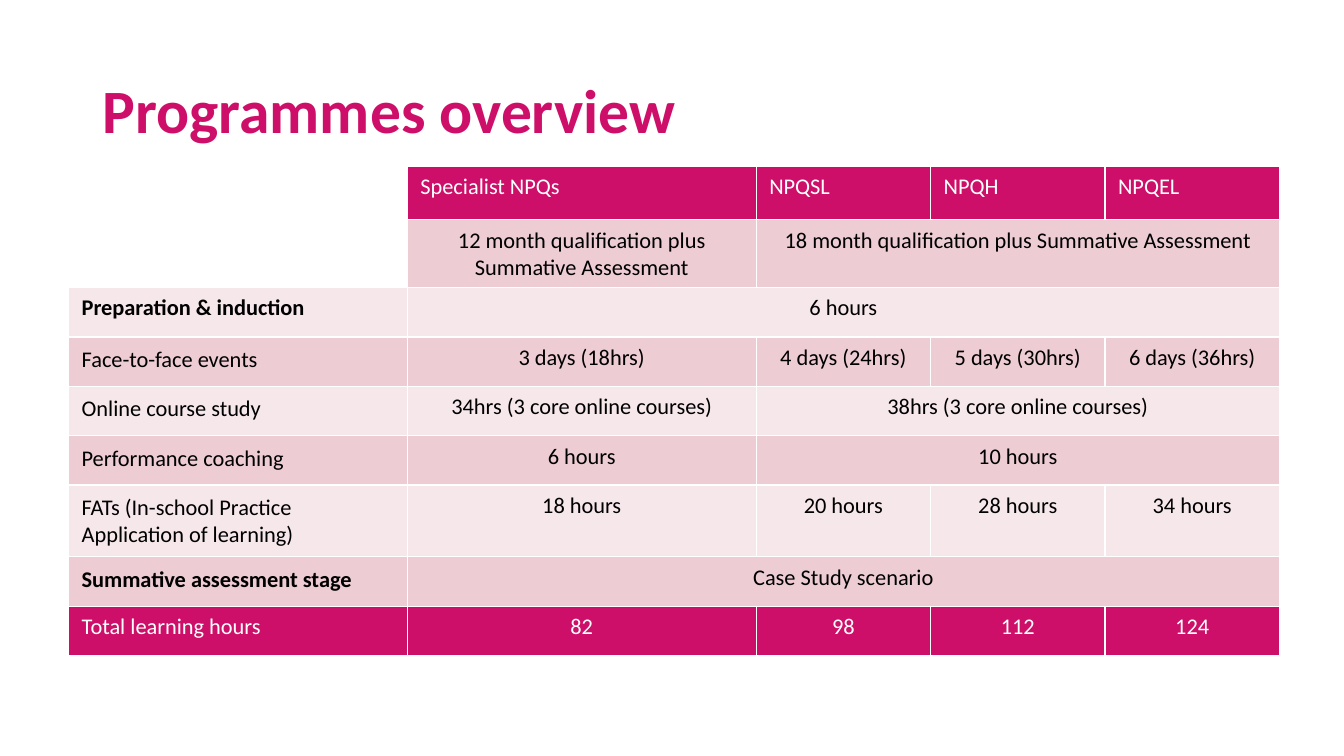
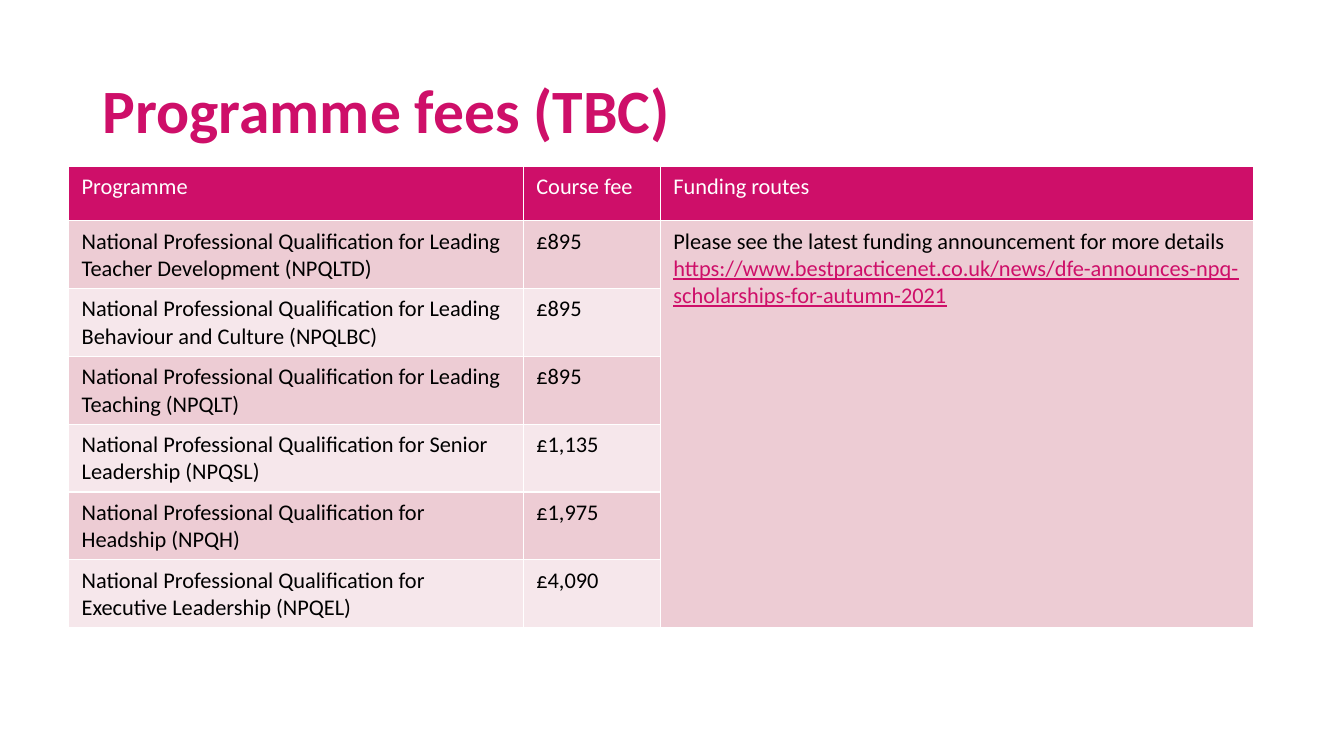
from lxml.etree import SubElement
from pptx import Presentation
from pptx.dml.color import RGBColor
from pptx.enum.text import MSO_ANCHOR, PP_ALIGN
from pptx.oxml.ns import qn
from pptx.util import Inches, Pt

COLOURS = {
    "brand": "CE0F69",
    "band_dark": "EDCCD4",
    "band_light": "F6E7EB",
    "text": "000000",
    "white": "FFFFFF",
}
FONT = "Calibri"
TABLE_LEFT, TABLE_TOP = 0.68, 1.65
QUALIFICATION = "National Professional Qualification for "

OVERVIEW = {
    "title": "Programmes overview",
    "widths": [3.36, 3.46, 1.73, 1.73, 1.73],
    "heights": [0.53, 0.67, 0.49, 0.49, 0.49, 0.49, 0.71, 0.49, 0.49],
    "rows": [
        ["", "Specialist NPQs", "NPQSL", "NPQH", "NPQEL"],
        ["", "12 month qualification plus Summative Assessment",
         "18 month qualification plus Summative Assessment"],
        ["Preparation & induction", "6 hours"],
        ["Face-to-face events", "3 days (18hrs)", "4 days (24hrs)", "5 days (30hrs)", "6 days (36hrs)"],
        ["Online course study", "34hrs (3 core online courses)", "38hrs (3 core online courses)"],
        ["Performance coaching", "6 hours", "10 hours"],
        ["FATs (In-school Practice Application of learning)",
         "18 hours", "20 hours", "28 hours", "34 hours"],
        ["Summative assessment stage", "Case Study scenario"],
        ["Total learning hours", "82", "98", "112", "124"],
    ],
    "brand_rows": {0, 8},
    "bold_labels": {2, 7},
    "deep_labels": range(3, 8),
    "value_align": PP_ALIGN.CENTER,
    "label_anchor": MSO_ANCHOR.TOP,
}

FEES = {
    "title": "Programme fees (TBC)",
    "widths": [4.51, 1.36, 5.88],
    "heights": [0.54] + [0.67] * 6,
    "rows": [
        ["Programme", "Course fee", "Funding routes"],
        [QUALIFICATION + "Leading Teacher Development (NPQLTD)", "£895",
         ["Please see the latest funding announcement for more details ",
          "https://www.bestpracticenet.co.uk/news/dfe-announces-npq-scholarships-for-autumn-2021"]],
        [QUALIFICATION + "Leading Behaviour and Culture (NPQLBC)", "£895", ""],
        [QUALIFICATION + "Leading Teaching (NPQLT)", "£895", ""],
        [QUALIFICATION + "Senior Leadership (NPQSL)", "£1,135", ""],
        [QUALIFICATION + "Headship (NPQH)", "£1,975", ""],
        [QUALIFICATION + "Executive Leadership (NPQEL)", "£4,090", ""],
    ],
    "brand_rows": {0},
    "bold_labels": (),
    "deep_labels": (),
    "value_align": PP_ALIGN.LEFT,
    "label_anchor": MSO_ANCHOR.BOTTOM,
    "tall_cell": ((1, 2), (6, 2)),
}


def add_run(paragraph, text, size, colour, bold=False, underline=False):
    run = paragraph.add_run()
    run.text = text
    font = run.font
    font.name, font.size = FONT, Pt(size)
    font.bold, font.underline = bold, underline
    font.color.rgb = RGBColor.from_string(COLOURS[colour])


def add_title(slide, text):
    title = slide.shapes.add_textbox(Inches(0.92), Inches(0.4), Inches(11.5), Inches(1.45))
    frame = title.text_frame
    frame.word_wrap = True
    frame.vertical_anchor = MSO_ANCHOR.MIDDLE
    paragraph = frame.paragraphs[0]
    paragraph.line_spacing = 0.9
    add_run(paragraph, text, 44, "brand", bold=True)


def add_borders(cell):
    properties = cell._tc.get_or_add_tcPr()
    for side in ("a:lnL", "a:lnR", "a:lnT", "a:lnB"):
        line = SubElement(properties, qn(side), w=str(Pt(1)))
        SubElement(SubElement(line, qn("a:solidFill")), qn("a:srgbClr"), val=COLOURS["white"])


def style_cell(cell, row, column, content):
    cell.margin_left = cell.margin_right = Inches(0.13)
    is_label = column == 0
    deep = is_label and row in content["deep_labels"]
    cell.margin_top = cell.margin_bottom = Inches(0.09 if deep else 0.07)
    if is_label and row > 0:
        cell.vertical_anchor = content["label_anchor"]
    add_borders(cell)
    if is_label and not content["rows"][row][0]:
        cell.fill.background()
        return
    band = "brand" if row in content["brand_rows"] else "band_dark" if row % 2 else "band_light"
    cell.fill.solid()
    cell.fill.fore_color.rgb = RGBColor.from_string(COLOURS[band])


def write_cell(cell, row, column, value, content):
    paragraph = cell.text_frame.paragraphs[0]
    if row > 0 and column > 0:
        paragraph.alignment = content["value_align"]
    colour = "white" if row in content["brand_rows"] else "text"
    bold = column == 0 and row in content["bold_labels"]
    if isinstance(value, list):
        notice, address = value
        add_run(paragraph, notice, 16, colour)
        add_run(paragraph, address, 16, "brand", underline=True)
    elif value:
        add_run(paragraph, value, 16, colour, bold)


def add_programme_table(slide, content):
    widths, heights = content["widths"], content["heights"]
    table = slide.shapes.add_table(
        len(heights), len(widths), Inches(TABLE_LEFT), Inches(TABLE_TOP),
        Inches(sum(widths)), Inches(sum(heights))).table
    table.first_row = table.horz_banding = False
    for column, width in enumerate(widths):
        table.columns[column].width = Inches(width)
    for row, (height, values) in enumerate(zip(heights, content["rows"])):
        table.rows[row].height = Inches(height)
        for column in range(len(widths)):
            style_cell(table.cell(row, column), row, column, content)
        for column, value in enumerate(values):
            write_cell(table.cell(row, column), row, column, value, content)
        if len(values) < len(widths):
            table.cell(row, len(values) - 1).merge(table.cell(row, len(widths) - 1))
    if "tall_cell" in content:
        first, last = content["tall_cell"]
        table.cell(*first).merge(table.cell(*last))


def main():
    deck = Presentation()
    deck.slide_width, deck.slide_height = Inches(13.33), Inches(7.5)
    for content in (OVERVIEW, FEES):
        slide = deck.slides.add_slide(deck.slide_layouts[6])
        add_title(slide, content["title"])
        add_programme_table(slide, content)
    deck.save("out.pptx")


if __name__ == "__main__":
    main()
